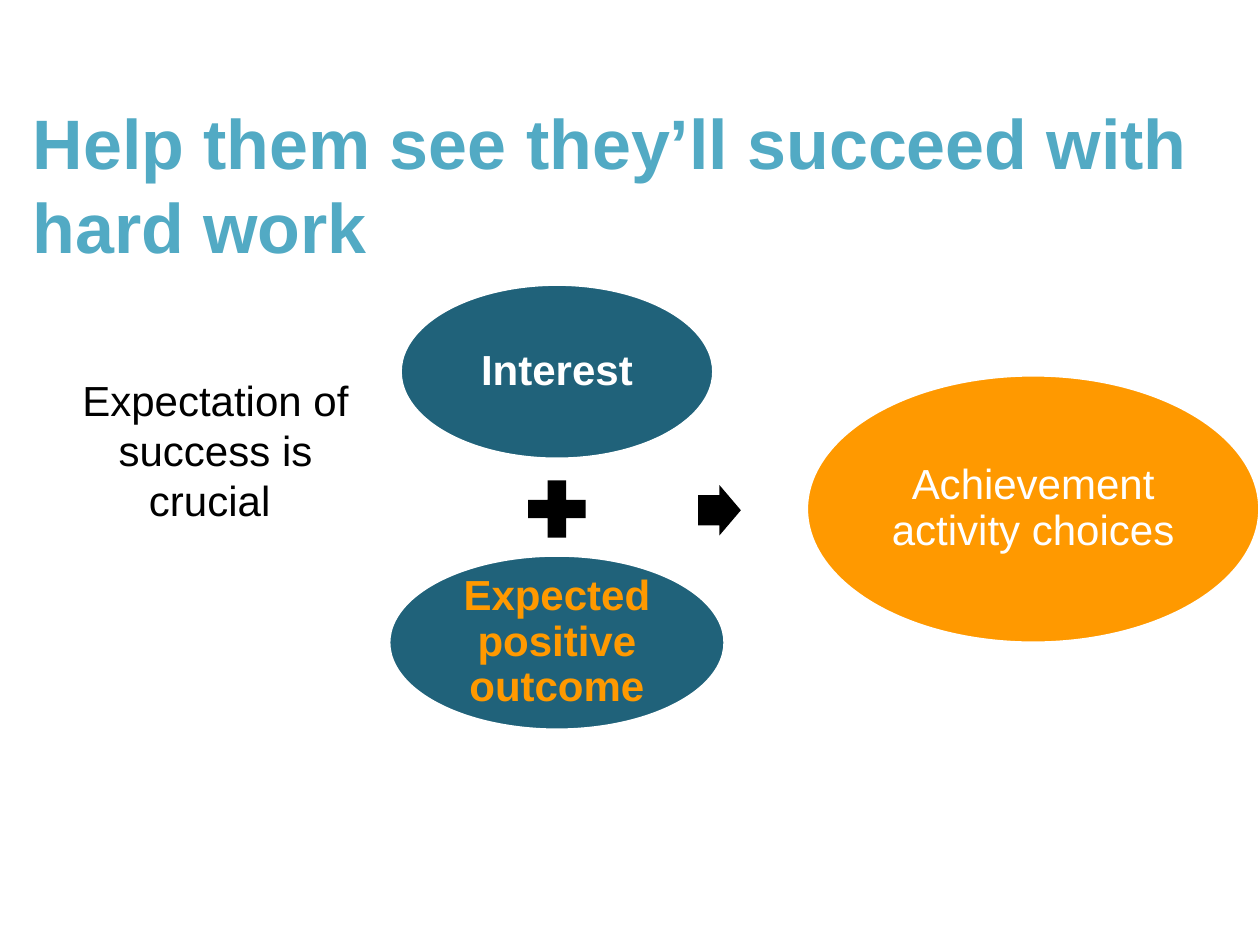
import pptx
import pptx.util
import pptx.dml.color
import pptx.enum.shapes
import pptx.enum.text

Inches, Pt = pptx.util.Inches, pptx.util.Pt
RGB = pptx.dml.color.RGBColor.from_string
SHAPE = pptx.enum.shapes.MSO_SHAPE
ANCHOR = pptx.enum.text.MSO_ANCHOR
ALIGN = pptx.enum.text.PP_ALIGN
AUTO_SIZE = pptx.enum.text.MSO_AUTO_SIZE

THEME = {
    "font": "Arial", "title_size": 40, "body_size": 24,
    "title": "52AAC4", "teal": "20627A", "orange": "FF9900",
    "white": "FFFFFF", "black": "000000",
}

TITLE = "Help them see they’ll succeed with hard work"
NOTE = "Expectation of success is crucial "

FACTOR_X = 4.42
MIDDLE_Y = 4.04

# text, centre, size, fill, text colour, bold
OVALS = [
    ("Interest", (FACTOR_X, 2.95), (2.49, 1.39), "teal", "white", True),
    ("Expected positive outcome", (FACTOR_X, 5.1), (2.67, 1.39), "teal", "orange", True),
    ("Achievement activity choices", (8.2, MIDDLE_Y), (3.6, 2.13), "orange", "white", False),
]
SYMBOLS = [
    (SHAPE.MATH_PLUS, (FACTOR_X, MIDDLE_Y), (0.62, 0.62), None),
    (SHAPE.RIGHT_ARROW, (5.71, 4.05), (0.34, 0.4), (0.6, 0.5)),
]


def style(p, size, color, bold=False):
    p.font.name = THEME["font"]
    p.font.size = Pt(THEME[size])
    p.font.bold = bold
    p.font.color.rgb = RGB(THEME[color])


def add_centred(shapes, kind, centre, size, fill):
    (x, y), (w, h) = centre, size
    sp = shapes.add_shape(kind, Inches(x - w / 2), Inches(y - h / 2), Inches(w), Inches(h))
    sp.shadow.inherit = False
    sp.fill.solid()
    sp.fill.fore_color.rgb = RGB(THEME[fill])
    return sp


def add_oval(shapes, text, centre, size, fill, color, bold):
    sp = add_centred(shapes, SHAPE.OVAL, centre, size, fill)
    sp.line.color.rgb = RGB(THEME["white"])
    sp.line.width = Pt(2)
    tf = sp.text_frame
    tf.word_wrap = True
    tf.vertical_anchor = ANCHOR.MIDDLE
    tf.margin_left = tf.margin_right = tf.margin_top = tf.margin_bottom = Inches(0.03)
    p = tf.paragraphs[0]
    p.text = text
    p.alignment = ALIGN.CENTER
    p.line_spacing = 0.9
    style(p, "body_size", color, bold)


def add_symbol(shapes, kind, centre, size, adjustments):
    sp = add_centred(shapes, kind, centre, size, "black")
    sp.line.fill.background()
    for i, value in enumerate(adjustments or ()):
        sp.adjustments[i] = value


def add_title(s):
    sp = s.shapes.title
    sp.left, sp.top, sp.width, sp.height = map(Inches, (0.16, 0.92, 9.83, 1.08))
    tf = sp.text_frame
    tf.text = TITLE
    tf.word_wrap = True
    tf.auto_size = AUTO_SIZE.NONE
    tf.vertical_anchor = ANCHOR.MIDDLE
    p = tf.paragraphs[0]
    p.alignment = ALIGN.LEFT
    style(p, "title_size", "title", True)


def add_note(s):
    sp = s.shapes.add_textbox(*map(Inches, (0.5, 2.92, 2.42, 1.72)))
    tf = sp.text_frame
    tf.word_wrap = True
    tf.auto_size = AUTO_SIZE.SHAPE_TO_FIT_TEXT
    p = tf.paragraphs[0]
    p.text = NOTE
    p.alignment = ALIGN.CENTER
    style(p, "body_size", "black")


def main():
    prs = pptx.Presentation()
    prs.slide_width, prs.slide_height = Inches(10), Inches(7.5)
    s = prs.slides.add_slide(prs.slide_layouts[5])
    add_title(s)
    diagram = s.shapes.add_group_shape()
    for oval in OVALS:
        add_oval(diagram.shapes, *oval)
    for symbol in SYMBOLS:
        add_symbol(diagram.shapes, *symbol)
    add_note(s)
    prs.save("out.pptx")


if __name__ == "__main__":
    main()
